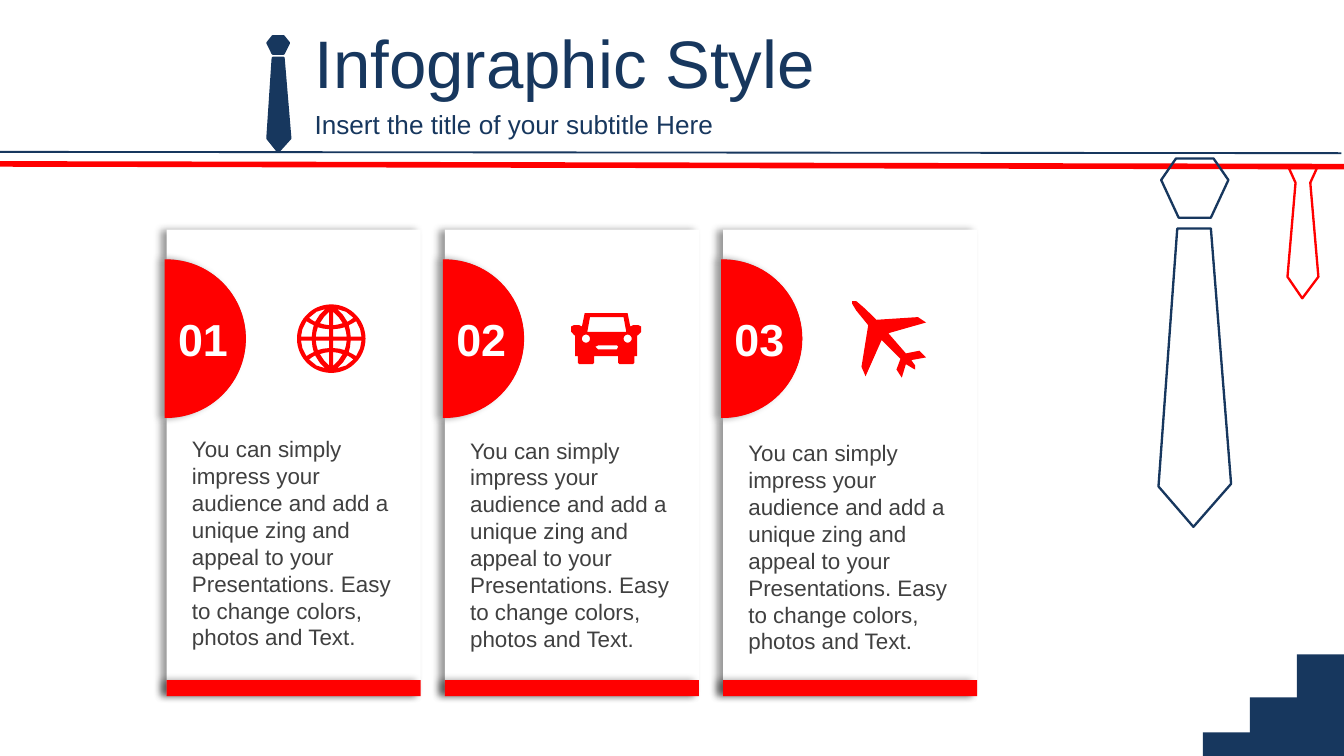
import math

from lxml import etree
from pptx import Presentation
from pptx import util as u
from pptx.dml.color import RGBColor
from pptx.enum import shapes, text
from pptx.oxml.ns import qn

PX = 9144  # EMU per px, 100 px to the inch
COLORS = {"navy": "17375E", "red": "FF0000", "white": "FFFFFF", "body": "404040"}
CARD_PITCH = 207
CARD_TEXT = (
    "You can simply impress your audience and add a unique zing and appeal "
    "to your Presentations. Easy to change colors, photos and Text."
)

presentation = Presentation()
presentation.slide_width = u.Emu(1000 * PX)
presentation.slide_height = u.Emu(5143500)
slide = presentation.slides.add_slide(presentation.slide_layouts[1])


def paint(shape, fill=None, line=None, width=1.25, shadow=False):
    """Set fill, line and shadow; a colour left out means none."""
    shape.shadow.inherit = False
    if fill:
        shape.fill.solid()
        shape.fill.fore_color.rgb = RGBColor.from_string(COLORS[fill])
    else:
        shape.fill.background()
    if line:
        shape.line.color.rgb = RGBColor.from_string(COLORS[line])
        shape.line.width = u.Pt(width)
    else:
        shape.line.fill.background()
    if shadow:
        effects = shape._element.spPr.find(qn("a:effectLst"))
        outer = etree.SubElement(effects, qn("a:outerShdw"), blurRad=str(u.Pt(4)),
                                 dist=str(u.Pt(3)), dir="10800000", algn="r", rotWithShape="0")
        color = etree.SubElement(outer, qn("a:srgbClr"), val="000000")
        etree.SubElement(color, qn("a:alpha"), val="40000")


def add_outline(contours):
    """Add one freeform of closed contours, inner ones being holes."""
    builder = None
    for contour in contours:
        points = [(round(x * PX), round(y * PX)) for x, y in contour]
        if builder is None:
            builder = slide.shapes.build_freeform(*points[0], scale=1.0)
        else:
            builder.move_to(*points[0])
        builder.add_line_segments(points[1:], close=True)
    return builder.convert_to_shape()


unit_circle = [
    (math.cos(math.radians(a)), math.sin(math.radians(a))) for a in range(-90, 270, 6)
]
half_circle = unit_circle[:31]

# Stair in the corner
for left, top, height in [(965, 487, 76), (930, 519, 44), (895, 545, 18)]:
    step = slide.shapes.add_shape(
        shapes.MSO_SHAPE.RECTANGLE, left * PX, top * PX, 35 * PX, height * PX)
    paint(step, "navy")

# Ruled lines below the heading
for x1, y1, x2, y2, color, width in [
    (0, 122, 1000, 124, "red", 3),
    (-2, 113, 998, 114, "navy", 1),
]:
    rule = slide.shapes.add_connector(
        shapes.MSO_CONNECTOR.STRAIGHT, x1 * PX, y1 * PX, x2 * PX, y2 * PX)
    rule.line.color.rgb = RGBColor.from_string(COLORS[color])
    rule.line.width = u.Pt(width)
    etree.SubElement(rule._element.spPr, qn("a:effectLst"))

# Ties
ties = [
    ([(199, 32), (203, 27), (211, 27), (215, 32), (211, 40), (203, 40)], "navy", "navy"),
    ([(216, 103), (207, 113), (199, 103), (203, 43), (211, 43)], "navy", "navy"),
    ([(959, 125), (980, 125), (975, 136), (981, 206), (969, 222), (958, 206), (964, 136)],
     None, "red"),
    ([(864, 134), (875, 118), (903, 118), (914, 134), (901, 162), (877, 162)], None, "navy"),
    ([(916, 360), (888, 392), (862, 362), (876, 170), (901, 170)], None, "navy"),
]
for points, fill, line in ties:
    paint(add_outline([points]), fill, line)

# Icons: the globe is four cells mirrored into each quadrant
globe_cells = [
    [(1.5, -20), (1.5, -10), (5, -10.5), (8.5, -11.5), (5.5, -16)],
    [(4.5, -22), (8.5, -18), (12, -12.5), (14.5, -14), (16.5, -15.5), (11, -20)],
    [(10, -8.5), (6, -7.5), (1.5, -7), (1.5, -1.5), (11.5, -1.5), (11, -5)],
    [(18.5, -13), (16, -11.5), (13, -10), (14, -6), (14.5, -1.5), (22.5, -1.5), (21.5, -7)],
]
globe = [[(246.5 + 25.5 * x, 252 + 25.5 * y) for x, y in unit_circle]]
for mirror_x in (1, -1):
    for mirror_y in (1, -1):
        for cell in globe_cells:
            globe.append([(246.5 + mirror_x * x, 252 + mirror_y * y) for x, y in cell])

car_half = [
    (16, 233), (18, 243), (20, 242), (24, 242), (26, 243), (26, 247), (24, 249), (23, 250),
    (23, 265), (21, 265), (21, 270), (20, 271), (10, 271), (9, 270), (9, 265),
]
car = [
    [(451 + x, y) for x, y in car_half] + [(451 - x, y) for x, y in reversed(car_half)],
    [(439, 236), (437, 247), (466, 247), (464, 236)],
    [(445, 257), (459, 257), (460, 258), (459, 260), (445, 260), (443, 258)],
]
for center in (436, 467):
    car.append([(center + 3 * x, 252 + 3 * y) for x, y in unit_circle])

plane = [[
    (689, 266), (678, 268), (681, 272), (681, 275), (679, 274), (674, 271), (671, 281),
    (667, 275), (670, 267), (656, 253), (644, 280), (641, 273), (646, 242), (637, 231),
    (634, 226), (634, 224), (637, 224), (644, 230), (652, 238), (683, 236), (689, 240),
    (661, 248), (674, 263), (684, 261),
]]

# Cards
cards = [("01", globe, 319), ("02", car, 320), ("03", plane, 322)]
labels = []
for index, (number, icon, text_top) in enumerate(cards):
    left = 124 + index * CARD_PITCH
    notch = [(left + 59 * x, 252 + 59 * y) for x, y in reversed(half_circle)]
    card = add_outline(
        [[(left, 171), (left + 189, 171), (left + 189, 517), (left, 517)] + notch])
    paint(card, "white", shadow=True)

    badge = slide.shapes.add_shape(
        shapes.MSO_SHAPE.CHORD, (left - 59) * PX, 193 * PX, 118 * PX, 118 * PX)
    badge.adjustments[0] = 161.152
    badge.adjustments[1] = 54.86
    paint(badge, "red", shadow=True)

    bar = slide.shapes.add_shape(
        shapes.MSO_SHAPE.RECTANGLE, left * PX, 506 * PX, 189 * PX, 12 * PX)
    paint(bar, "red", shadow=True)
    paint(add_outline(icon), "red")

    for box, wording, size, color, bold, align in [
        ((left + 9, text_top, 173, 172), CARD_TEXT, 12, "body", False, text.PP_ALIGN.LEFT),
        ((left - 7, 227, 68, 50), number, 24, "white", True, text.PP_ALIGN.CENTER),
    ]:
        label = slide.shapes.add_textbox(*[length * PX for length in box])
        labels.append((label, wording, size, color, bold, align))

# Heading placeholders, formatted together with the card labels
title, subtitle = slide.placeholders
for placeholder, wording, size, top, height in [
    (title, "Infographic Style", 36, 14, 63),
    (subtitle, "Insert the title of your subtitle Here", 14, 77, 31),
]:
    frame = {"left": 224, "top": top, "width": 776, "height": height}
    for name, length in frame.items():
        setattr(placeholder, name, length * PX)
    placeholder.text_frame.vertical_anchor = text.MSO_ANCHOR.MIDDLE
    labels.append((placeholder, wording, size, "navy", False, text.PP_ALIGN.LEFT))

for shape, wording, size, color, bold, align in labels:
    shape.text_frame.word_wrap = True
    shape.text_frame.auto_size = text.MSO_AUTO_SIZE.NONE
    paragraph = shape.text_frame.paragraphs[0]
    paragraph.alignment = align
    run = paragraph.add_run()
    run.text = wording
    for name, value in {"name": "Arial", "size": u.Pt(size), "bold": bold}.items():
        setattr(run.font, name, value)
    run.font.color.rgb = RGBColor.from_string(COLORS[color])

subtitle_format = subtitle.text_frame.paragraphs[0]._p.get_or_add_pPr()
subtitle_format.set("marL", "0")
subtitle_format.set("indent", "0")
etree.SubElement(subtitle_format, qn("a:buNone"))

presentation.save("out.pptx")
